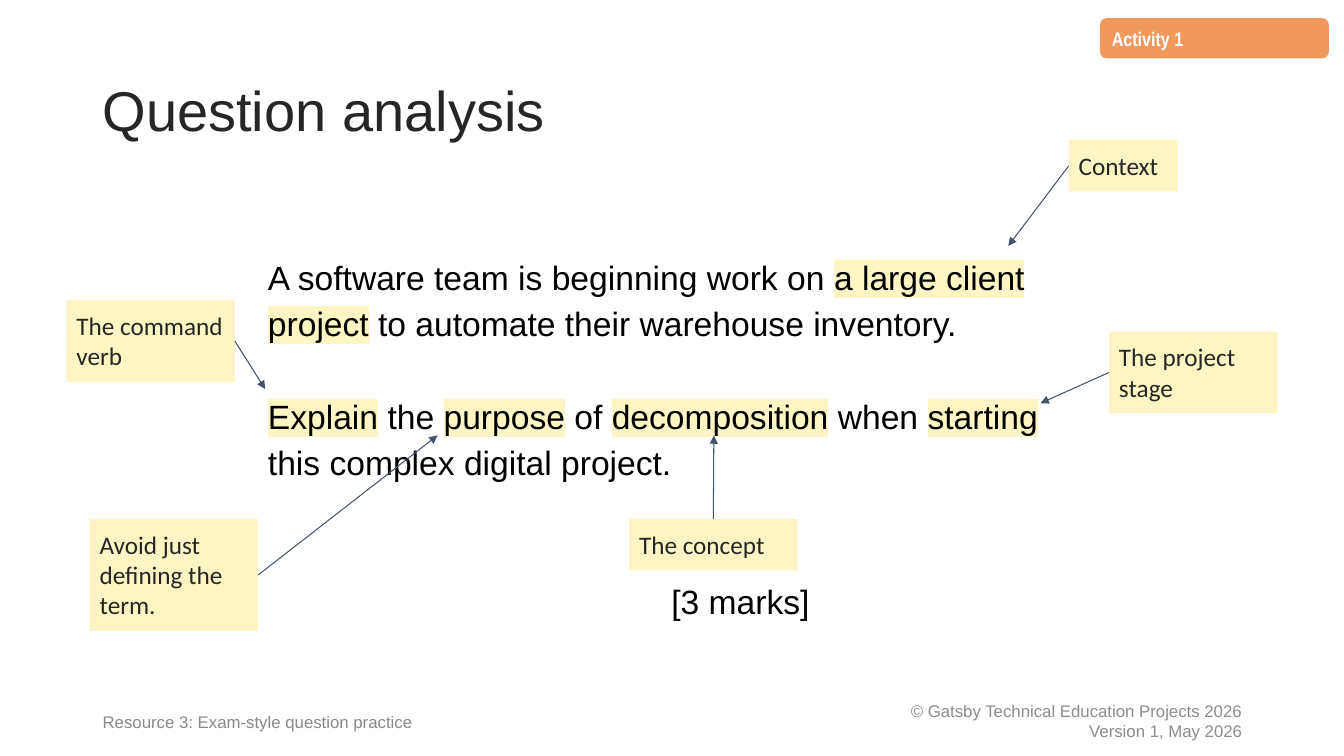
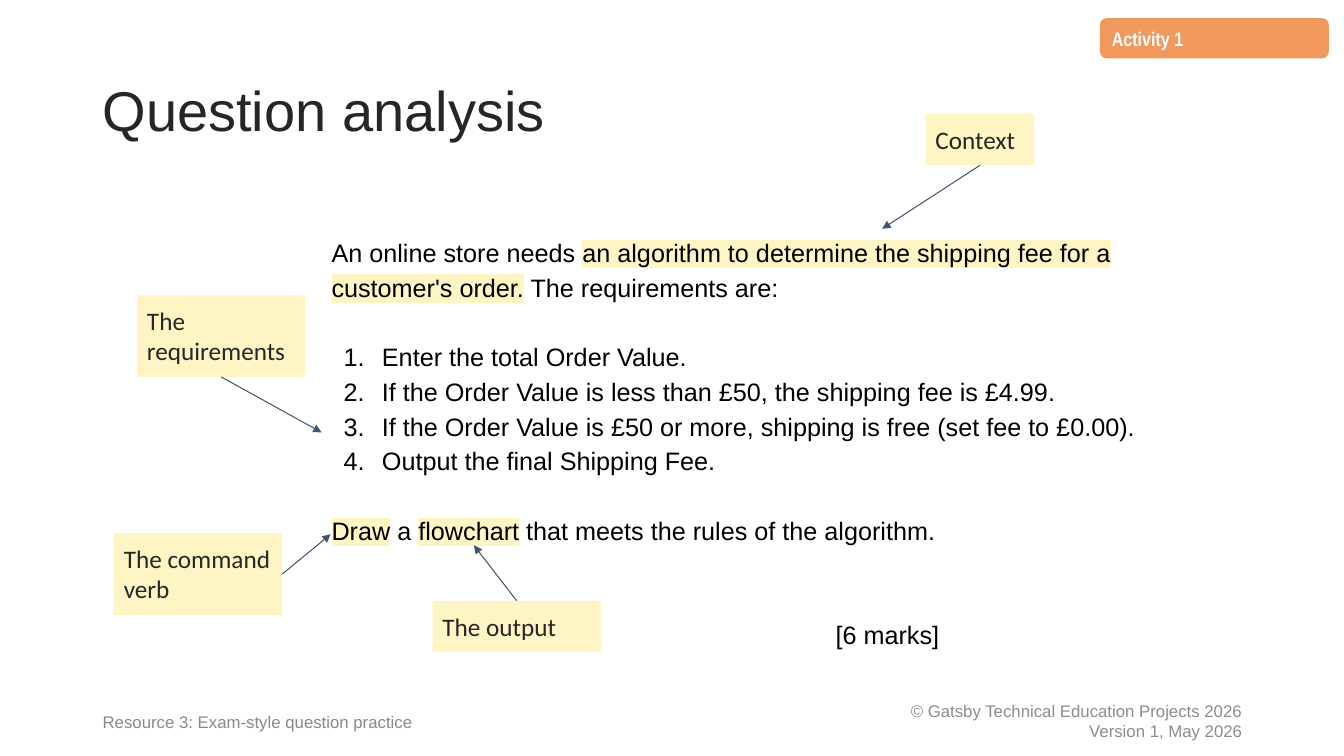
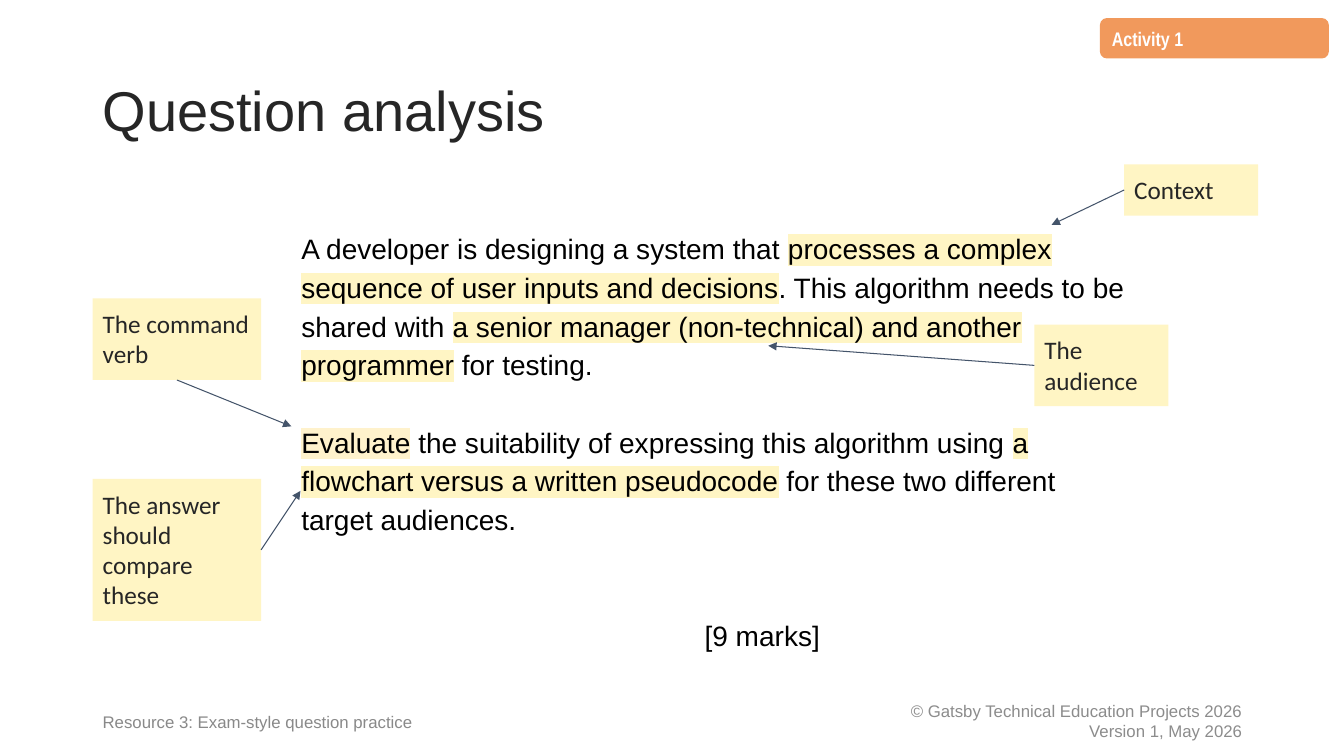
from lxml import etree
from pptx import Presentation
from pptx.dml.color import RGBColor
from pptx.enum.shapes import MSO_CONNECTOR, MSO_SHAPE
from pptx.enum.text import MSO_ANCHOR, MSO_AUTO_SIZE, PP_ALIGN
from pptx.oxml.ns import qn
from pptx.util import Inches, Pt

# Shared look
INK = RGBColor(0x26, 0x26, 0x26)
BLACK = RGBColor(0, 0, 0)
WHITE = RGBColor(0xFF, 0xFF, 0xFF)
GREY = RGBColor(0x89, 0x89, 0x89)
PALE = RGBColor(0x8C, 0x8C, 0x8C)
ORANGE = RGBColor(0xF1, 0x99, 0x5C)
YELLOW = RGBColor(0xFF, 0xF5, 0xC4)
CREAM = RGBColor(0xFF, 0xF2, 0xCC)
SLATE = RGBColor(0x44, 0x54, 0x6A)
TOP, LEFT, BOTTOM, RIGHT = range(4)
LINE = 1.38  # height of a question line, in text sizes

TITLE = "Question analysis"
TAG = "Activity 1"
SOURCE = "Resource 3: Exam-style question practice"
RIGHTS = ["© Gatsby Technical Education Projects 2026", "Version 1, May 2026"]

# Question: runs are (text, highlight)
# Notes: text, left, top, width, lines, side the arrow leaves, arrow tip
SLIDES = [
    {
        "at": (2.56, 2.44), "size": 24,
        "intro": [("A software team is beginning work on ", None),
                  ("a large client project", YELLOW),
                  (" to automate their warehouse inventory.", None)],
        "steps": [],
        "task": [("Explain", YELLOW), (" the ", None), ("purpose", YELLOW),
                 (" of ", None), ("decomposition", YELLOW), (" when ", None),
                 ("starting ", YELLOW),
                 ("this complex digital project.", None)],
        "marks": ("[3 marks]", 4),
        "notes": [
            ("Context", 10.6, 1.39, 1.08, 1, LEFT, (10, 2.44)),
            ("The command verb", 0.66, 2.98, 1.67, 2, RIGHT, (2.63, 3.86)),
            ("Avoid just defining the term.", 0.89, 5.15, 1.67, 3, RIGHT,
             (4.34, 4.32)),
            ("The concept", 6.24, 5.15, 1.67, 1, TOP, (7.08, 4.32)),
            ("The project stage", 11, 3.29, 1.67, 2, LEFT, (10.32, 4)),
        ],
    },
    {
        "at": (3.19, 2.26), "size": 18,
        "intro": [("An online store needs ", None),
                  ("an algorithm to determine the shipping fee for a "
                   "customer's order.", YELLOW),
                  (" The requirements are:", None)],
        "steps": [
            "Enter the total Order Value.",
            "If the Order Value is less than £50, the shipping fee is £4.99.",
            "If the Order Value is £50 or more, shipping is free "
            "(set fee to £0.00).",
            "Output the final Shipping Fee.",
        ],
        "task": [("Draw", YELLOW), (" a ", None), ("flowchart", YELLOW),
                 (" that meets the rules of the algorithm.", None)],
        "marks": ("[6 marks]", 5),
        "notes": [
            ("Context", 9.18, 1.13, 1.08, 1, BOTTOM, (8.75, 2.27)),
            ("The command verb", 1.13, 5.29, 1.67, 2, RIGHT, (3.28, 5.3)),
            ("The requirements", 1.36, 2.93, 1.67, 2, BOTTOM, (3.19, 4.29)),
            ("The output", 4.29, 5.96, 1.67, 1, TOP, (4.7, 5.41)),
        ],
    },
    {
        "at": (2.89, 2.2), "size": 20,
        "intro": [("A developer is designing a system that ", None),
                  ("processes a complex sequence of user inputs and "
                   "decisions", YELLOW),
                  (". This algorithm needs to be shared with ", None),
                  ("a senior manager (non-technical) and another programmer",
                   YELLOW),
                  (" for testing.", None)],
        "steps": [],
        "task": [("Evaluate", CREAM),
                 (" the suitability of expressing this algorithm using ",
                  None),
                 ("a flowchart versus a written pseudocode", YELLOW),
                 (" for these two different target audiences.", None)],
        "marks": ("[9 marks]", 4),
        "notes": [
            ("The audience", 10.26, 3.22, 1.33, 2, LEFT, (7.62, 3.43)),
            ("The command verb", 0.92, 2.96, 1.67, 2, BOTTOM, (2.89, 4.23)),
            ("The answer should compare these", 0.92, 4.75, 1.67, 4, RIGHT,
             (2.98, 4.87)),
            ("Context", 11.15, 1.63, 1.33, 1, LEFT, (10.43, 2.23)),
        ],
    },
]


def add_run(para, text, size, color, face="Arial", mark=None, bold=None):
    run = para.add_run()
    run.text = text
    font = run.font
    font.size = Pt(size)
    font.bold = bold
    font.color.rgb = color
    if mark is not None:
        light = etree.SubElement(run._r.get_or_add_rPr(), qn("a:highlight"))
        etree.SubElement(light, qn("a:srgbClr"), val=str(mark))
    font.name = face


def add_text(slide, box, lines, size, color, align=PP_ALIGN.LEFT, pitch=None):
    frame = slide.shapes.add_textbox(*map(Inches, box)).text_frame
    frame.word_wrap = True
    frame.vertical_anchor = MSO_ANCHOR.MIDDLE
    for i, text in enumerate(lines):
        para = frame.add_paragraph() if i else frame.paragraphs[0]
        para.alignment = align
        para.line_spacing = pitch
        add_run(para, text, size, color)


def add_panel(slide, kind, box, fill):
    panel = slide.shapes.add_shape(kind, *map(Inches, box))
    panel.shadow.inherit = False
    panel.fill.solid()
    panel.fill.fore_color.rgb = fill
    panel.line.fill.background()
    panel.text_frame.word_wrap = True
    panel.text_frame.paragraphs[0].alignment = PP_ALIGN.LEFT
    return panel


def add_frame(slide):
    """Title, activity tag and footers."""
    add_text(slide, (7.92, 6.95, 4.5, 0.4), RIGHTS, 12, PALE, PP_ALIGN.RIGHT)
    add_text(slide, (0.92, 0.4, 11.5, 1.45), [TITLE], 40, INK, pitch=0.9)
    add_text(slide, (0.92, 6.95, 4.6, 0.4), [SOURCE], 12, GREY, pitch=1.08)
    tag = add_panel(slide, MSO_SHAPE.FLOWCHART_ALTERNATE_PROCESS,
                    (10.91, 0.18, 2.27, 0.4), ORANGE)
    tag.text_frame.vertical_anchor = MSO_ANCHOR.MIDDLE
    add_run(tag.text_frame.paragraphs[0], TAG, 14, WHITE, "Arial Narrow",
            bold=True)


def add_quiz(slide, data):
    """Question text: intro, numbered steps, task and marks."""
    size = data["size"]
    text, shift = data["marks"]
    # Each row: runs, blank lines above, left indent, hanging indent
    rows = [(data["intro"], 0, 0, 0)]
    rows += [([(step, None)], int(i == 0), 0.5, -0.38)
             for i, step in enumerate(data["steps"])]
    rows += [(data["task"], 1, 0, 0), ([(text, None)], 2, shift, 0)]

    box = slide.shapes.add_textbox(*map(Inches, (*data["at"], 8.44, 4.06)))
    frame = box.text_frame
    frame.word_wrap = True
    for i, (runs, gap, left, hang) in enumerate(rows):
        para = frame.add_paragraph() if i else frame.paragraphs[0]
        props = para._p.get_or_add_pPr()
        props.set("marL", str(Inches(left)))
        props.set("indent", str(Inches(hang)))
        if hang:
            tint = etree.SubElement(props, qn("a:buClr"))
            etree.SubElement(tint, qn("a:srgbClr"), val=str(BLACK))
            etree.SubElement(props, qn("a:buAutoNum"), type="arabicPeriod")
        para.line_spacing = 1.15
        if gap:
            para.space_before = Pt(round(gap * LINE * size, 1))
        for words, mark in runs:
            add_run(para, words, size, BLACK, mark=mark)


def add_note(slide, text, left, top, width, lines, side, tip):
    """Yellow note with an arrow from the middle of one side."""
    note = add_panel(slide, MSO_SHAPE.RECTANGLE,
                     (left, top, width, 0.21 + 0.3 * lines), YELLOW)
    frame = note.text_frame
    frame.margin_top = frame.margin_bottom = Inches(0.1)
    frame.vertical_anchor = MSO_ANCHOR.TOP
    frame.auto_size = MSO_AUTO_SIZE.SHAPE_TO_FIT_TEXT
    add_run(frame.paragraphs[0], text, 18, INK, "Calibri")

    end = [Inches(n) for n in tip]
    arrow = slide.shapes.add_connector(MSO_CONNECTOR.STRAIGHT, *end, *end)
    arrow.begin_connect(note, side)
    arrow.line.color.rgb = SLATE
    arrow.line.width = Pt(0.75)
    etree.SubElement(arrow.line._get_or_add_ln(), qn("a:tailEnd"),
                     type="triangle")
    etree.SubElement(arrow._element.spPr, qn("a:effectLst"))


def main():
    deck = Presentation()
    deck.slide_width, deck.slide_height = Inches(13.33), Inches(7.5)
    for data in SLIDES:
        slide = deck.slides.add_slide(deck.slide_layouts[6])
        add_frame(slide)
        add_quiz(slide, data)
        for note in data["notes"]:
            add_note(slide, *note)
    deck.save("out.pptx")


if __name__ == "__main__":
    main()
